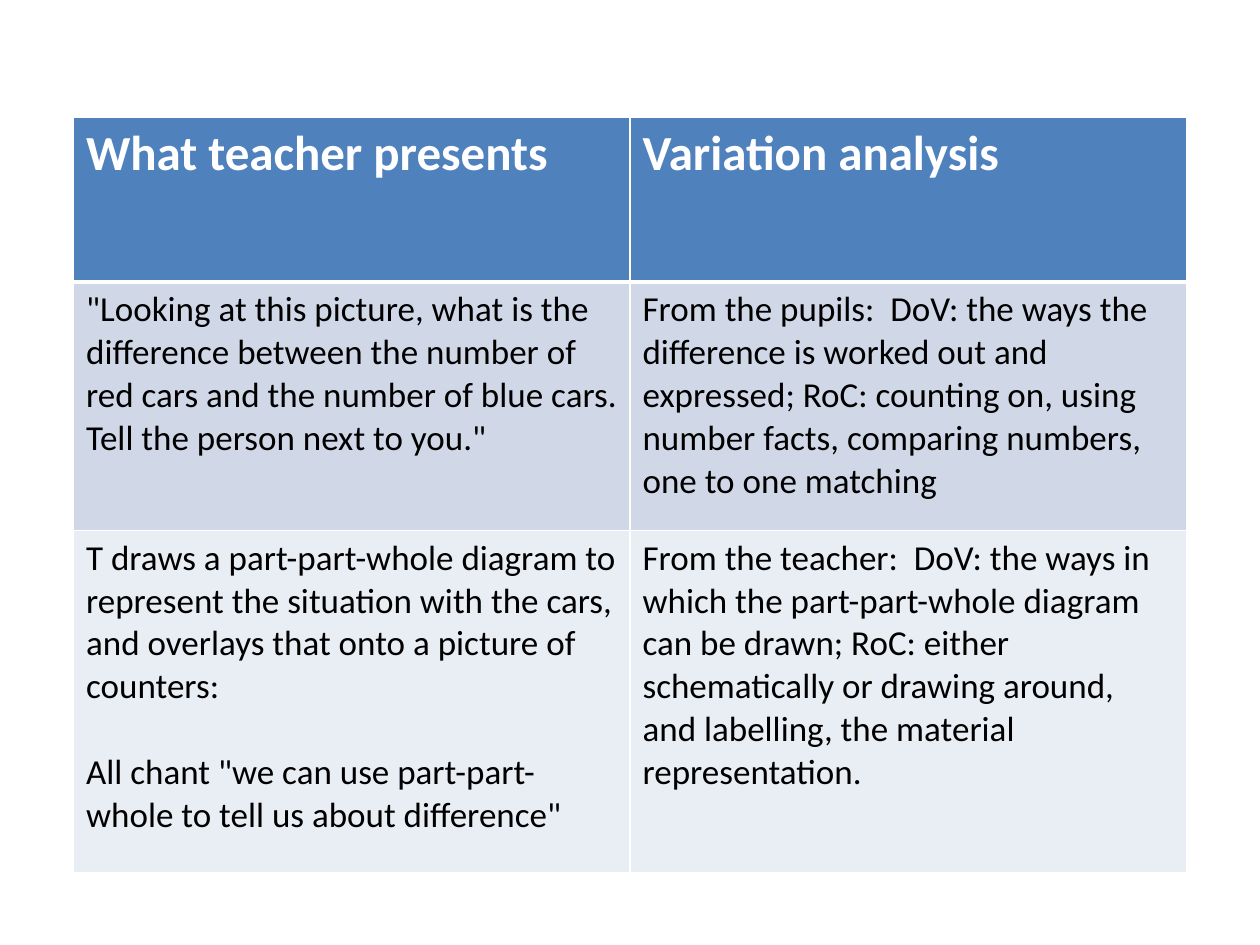
from pptx import Presentation
from pptx.dml.color import RGBColor as Rgb
from pptx.oxml.ns import qn
from pptx.util import Pt
from lxml.etree import SubElement as Sub

HEAD = ["What teacher presents", "Variation analysis"]
BODY = [
    ['"Looking at this picture, what is the difference between the number '
     'of red cars and the number of blue cars. Tell the person next to you."',
     "From the pupils:  DoV: the ways the difference is worked out and "
     "expressed; RoC: counting on, using number facts, comparing numbers, "
     "one to one matching"],
    ["T draws a part-part-whole diagram to represent the situation with the "
     "cars, and overlays that onto a picture of counters:\n"
     'All chant "we can use part-part-whole to tell us about difference"',
     "From the teacher:  DoV: the ways in which the part-part-whole diagram "
     "can be drawn; RoC: either schematically or drawing around, and "
     "labelling, the material representation."],
]


def color(code):
    return Rgb.from_string(code)


class Deck:
    font = "Calibri"
    rule = "FFFFFF"
    fills = ["4F81BD", "D0D8E8", "E9EDF4"]
    gap = 24.4

    def __init__(self, wide, high):
        self.prs = Presentation()
        self.prs.slide_width, self.prs.slide_height = Pt(wide), Pt(high)
        self.slide = self.prs.slides.add_slide(self.prs.slide_layouts[6])

    def edge(self, cell, side, width):
        props = cell._tc.get_or_add_tcPr()
        line = Sub(props, qn("a:ln" + side), w=str(Pt(width)))
        fill = Sub(line, qn("a:solidFill"))
        Sub(fill, qn("a:srgbClr"), val=self.rule)

    def cell(self, cell, text, row):
        head = row == 0
        # Heavy rule between header and body
        heavy = {0: "B", 1: "T"}.get(row)
        for side in "LRTB":
            self.edge(cell, side, 3 if side == heavy else 1)
        cell.fill.solid()
        cell.fill.fore_color.rgb = color(self.fills[row])
        cell.text_frame.text = text
        for num, para in enumerate(cell.text_frame.paragraphs):
            para.space_before = Pt(self.gap if num else 0)
            for run in para.runs:
                font = run.font
                font.name, font.bold = self.font, head
                font.size = Pt(28 if head else 20)
                font.color.rgb = color("FFFFFF" if head else "000000")

    def table(self, rows, left, top, width, highs):
        cols = len(rows[0])
        grid = self.slide.shapes.add_table(
            len(rows), cols, Pt(left), Pt(top), Pt(width), Pt(sum(highs))).table
        for col in grid.columns:
            col.width = Pt(width / cols)
        for num, (texts, high) in enumerate(zip(rows, highs)):
            grid.rows[num].height = Pt(high)
            for col, text in enumerate(texts):
                self.cell(grid.cell(num, col), text, num)


def main():
    deck = Deck(720, 540)
    # Lesson table: header, then one row per step
    deck.table([HEAD] + BODY, 42, 67.2, 636, [94, 142, 195.5])
    deck.prs.save("out.pptx")


if __name__ == "__main__":
    main()
